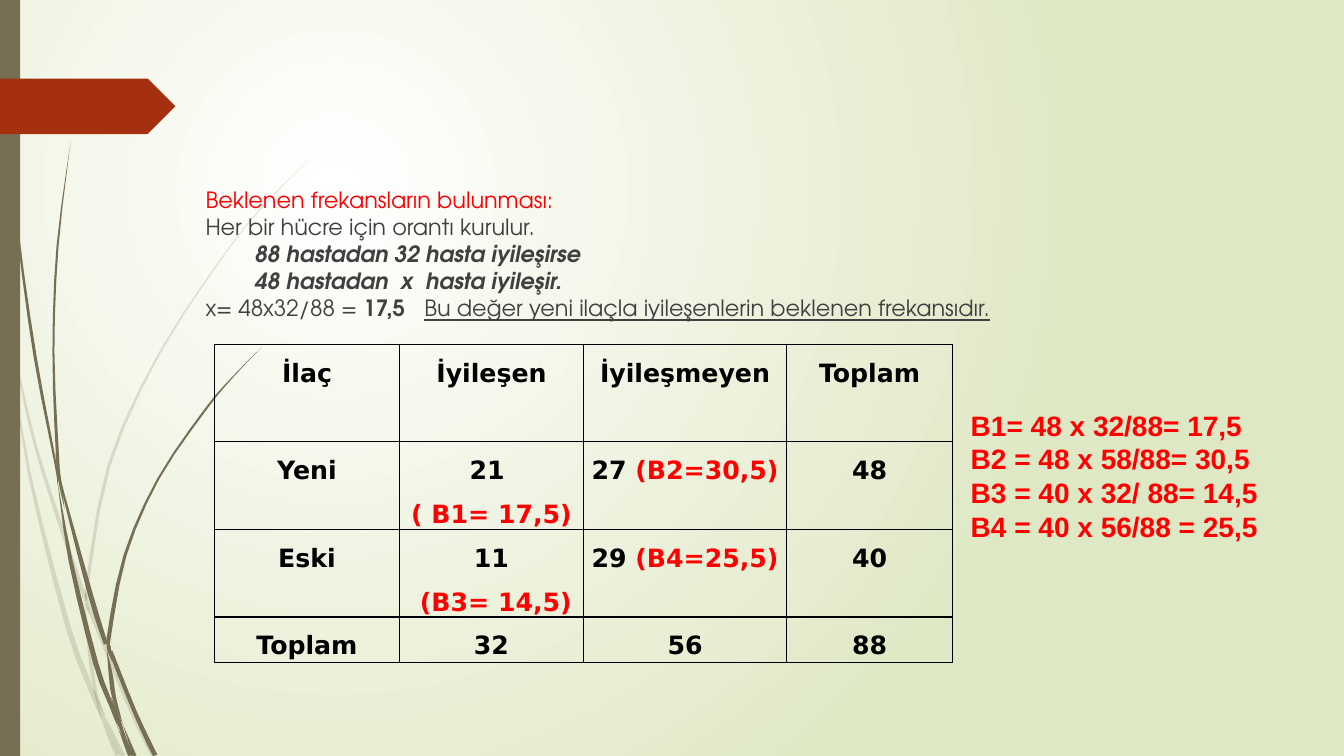
import math

from lxml import etree
from pptx import Presentation
from pptx.dml.color import RGBColor
from pptx.enum.shapes import MSO_SHAPE
from pptx.enum.text import PP_ALIGN
from pptx.oxml.ns import qn
from pptx.util import Inches, Pt

RECTANGLE, TAG = MSO_SHAPE.RECTANGLE, MSO_SHAPE.PENTAGON
CENTER = PP_ALIGN.CENTER

WHITE = RGBColor(0xFF, 0xFF, 0xFF)
PALE_GREEN = RGBColor(0xDF, 0xE8, 0xC4)
OLIVE = RGBColor(0x76, 0x6F, 0x54)
RUST = RGBColor(0xA5, 0x30, 0x10)
RED = RGBColor(0xFF, 0x00, 0x00)
BLACK = RGBColor(0x00, 0x00, 0x00)
GREY = RGBColor(0x40, 0x40, 0x40)

# Paragraphs: left indent, then runs of (text, colour, styles)
EXPLANATION = [
    (0, [("Beklenen frekansların bulunması:", RED, "")]),
    (0, [("Her bir hücre için orantı kurulur.", GREY, "")]),
    (0.49, [("88 hastadan 32 hasta iyileşirse", GREY, "bi")]),
    (0.49, [("48 hastadan  x  hasta iyileşir.", GREY, "bi")]),
    (0, [("x= 48x32/88 = ", GREY, ""), ("17,5\t", GREY, "b"),
         ("Bu değer yeni ilaçla iyileşenlerin beklenen frekansıdır.", GREY, "u")]),
]
FINDING_TAB = 2.17

EXPECTED = [
    "B1= 48 x 32/88= 17,5",
    "B2 = 48 x 58/88= 30,5",
    "B3 = 40 x 32/ 88= 14,5",
    "B4 = 40 x 56/88 = 25,5",
]

# Cells: observed count, expected count, whether the latter has its own line
COUNTS = [
    ["İlaç", "İyileşen", "İyileşmeyen", "Toplam"],
    ["Yeni", ("21 ", "( B1= 17,5)", True), ("27 ", "(B2=30,5)", False), "48"],
    ["Eski", ("11", " (B3= 14,5)", True), ("29 ", "(B4=25,5)", False), "40"],
    ["Toplam", "32", "56", "88"],
]
COLUMN_WIDTHS = [1.83, 1.83, 2.01, 1.65]
ROW_HEIGHTS = [0.96, 0.87, 0.87, 0.45]

# Pieces of the grass blades: (x, y, thickness) along the middle of each
PALE_BLADES = [
    [(0, 2.9, 0.04), (0.06, 3.2, 0.02), (0.11, 3.5, 0)],
    [(0.14, 3.45, 0), (0.21, 3.82, 0.02), (0.36, 4.45, 0.03), (0.6, 5.21, 0.04),
     (0.84, 5.93, 0.04)],
    [(0.88, 6.02, 0.04), (0.9, 6.07, 0.04), (1.25, 6.93, 0.04), (1.52, 7.5, 0.05)],
    [(1.05, 7.11, 0), (1.13, 7.31, 0.03), (1.22, 7.5, 0.05)],
    [(0.11, 3.5, 0), (0.29, 4.69, 0.03), (0.67, 6.2, 0.05), (0.92, 6.88, 0.05),
     (1.01, 7.14, 0)],
    [(0.84, 5.99, 0), (0.89, 6.46, 0.04), (0.95, 6.87, 0.03), (1.05, 7.11, 0)],
    [(3.12, 1.53, 0), (2.68, 1.97, 0.01), (2.28, 2.45, 0.01), (1.59, 3.49, 0.02),
     (1.08, 4.62, 0.03), (0.86, 5.84, 0.03), (0.87, 5.94, 0)],
    [(1.01, 7.14, 0), (1.08, 7.32, 0.02), (1.17, 7.5, 0.05)],
    [(0.85, 5.86, 0), (0.86, 5.97, 0.04), (0.88, 6.1, 0)],
    [(0.93, 6.83, 0), (0.99, 7.03, 0.04), (1.08, 7.26, 0.03), (1.19, 7.5, 0)],
]
DARK_BLADES = [
    [(0.03, 0, 0.01), (0.05, 0.48, 0.01), (0.07, 1.1, 0.01), (0.18, 2.33, 0.02),
     (0.35, 3.55, 0.03), (0.55, 4.6, 0.02), (0.57, 4.81, 0)],
    [(0.6, 4.72, 0), (0.63, 4.9, 0.02), (0.9, 5.91, 0.05), (1.05, 6.39, 0.04)],
    [(1.1, 6.45, 0.02), (1.12, 6.52, 0.04), (1.34, 7.07, 0.04), (1.54, 7.5, 0.05)],
    [(0.57, 4.77, 0), (0.7, 5.56, 0.04), (0.95, 6.58, 0.05), (1.1, 6.99, 0.04),
     (1.17, 7.22, 0)],
    [(0.7, 1.41, 0), (0.57, 2.45, 0.02), (0.53, 3.49, 0.02), (0.57, 4.51, 0.03),
     (0.6, 4.72, 0)],
    [(1.22, 7.19, 0), (1.28, 7.35, 0.02), (1.34, 7.5, 0.03)],
    [(0.55, 4.49, 0), (0.59, 4.75, 0.03), (0.64, 5.05, 0)],
    [(2.6, 3.44, 0), (2.31, 3.74, 0.01), (2.04, 4.06, 0.02), (1.57, 4.75, 0.02),
     (1.24, 5.51, 0.03), (1.08, 6.32, 0.04), (1.1, 6.41, 0)],
    [(1.17, 7.22, 0), (1.23, 7.36, 0.02), (1.29, 7.5, 0.04)],
    [(1.06, 6.45, 0), (1.1, 6.7, 0.04), (1.13, 6.91, 0.04), (1.22, 7.19, 0)],
    [(1.06, 6.31, 0), (1.08, 6.43, 0.04), (1.11, 6.56, 0)],
    [(1.1, 6.91, 0), (1.16, 7.1, 0.04), (1.24, 7.33, 0.03), (1.32, 7.5, 0.03)],
]


def paint(shape, color):
    shape.shadow.inherit = False
    shape.fill.solid()
    shape.fill.fore_color.rgb = color
    shape.line.fill.background()


def smooth(knots, steps=3):
    """Return points of a Catmull-Rom curve through the knots."""
    padded = [knots[0], *knots, knots[-1]]
    points = []
    for a, b, c, d in zip(padded, padded[1:], padded[2:], padded[3:]):
        for step in range(steps):
            t = step / steps
            points.append([
                q + t * (r - p) / 2 + t**2 * (2 * p - 5 * q + 4 * r - s) / 2
                + t**3 * (3 * q - p - 3 * r + s) / 2
                for p, q, r, s in zip(a, b, c, d)])
    return points + [list(knots[-1])]


def draw_blade(slide, knots, opacity):
    middle = smooth(knots)
    left, right = [], []
    for i, (x, y, thickness) in enumerate(middle):
        before, after = middle[max(i - 1, 0)], middle[min(i + 1, len(middle) - 1)]
        dx, dy = after[0] - before[0], after[1] - before[1]
        scale = max(thickness, 0) / 2 / math.hypot(dx, dy)
        left.append((x - dy * scale, y + dx * scale))
        right.append((x + dy * scale, y - dx * scale))
    outline = [(Inches(max(x, 0)), Inches(min(max(y, 0), 7.5)))
               for x, y in left + right[::-1]]
    builder = slide.shapes.build_freeform(*outline[0])
    builder.add_line_segments(outline[1:], close=True)
    blade = builder.convert_to_shape()
    paint(blade, OLIVE)
    if opacity < 100:
        color = next(blade._element.spPr.iter(qn("a:srgbClr")))
        etree.SubElement(color, qn("a:alpha"), val=str(opacity * 1000))


def add_run(paragraph, text, font_name, size, color, styles=""):
    run = paragraph.add_run()
    run.text = text
    font = run.font
    font.name, font.size, font.color.rgb = font_name, Pt(size), color
    font.bold, font.italic, font.underline = (s in styles for s in "biu")


def add_paragraph(frame, first):
    return frame.paragraphs[0] if first else frame.add_paragraph()


def add_text_frame(slide, left, top, width, height):
    box = slide.shapes.add_textbox(*map(Inches, (left, top, width, height)))
    box.text_frame.word_wrap = True
    return box.text_frame


def fill_background(slide):
    fill = slide.background.fill
    fill.gradient()
    for stop, color in zip(fill.gradient_stops, (WHITE, PALE_GREEN)):
        stop.color.rgb = color
    gradient = next(slide._element.iter(qn("a:gradFill")))
    gradient.remove(gradient.find(qn("a:lin")))
    circle = etree.SubElement(gradient, qn("a:path"), {"path": "circle"})
    etree.SubElement(circle, qn("a:fillToRect"),
                     l="50000", t="50000", r="100000", b="100000")


def fill_cell(cell, content):
    cell.margin_left = cell.margin_right = Inches(0.07)
    cell.margin_top = cell.margin_bottom = 0
    observed, expected, own_line = (
        content if isinstance(content, tuple) else (content, "", False))
    paragraph = cell.text_frame.paragraphs[0]
    add_run(paragraph, observed, "DejaVu Sans", 18, BLACK, "b")
    if own_line:
        paragraph = cell.text_frame.add_paragraph()
    if expected:
        add_run(paragraph, expected, "DejaVu Sans", 18, RED, "b")
    for line in cell.text_frame.paragraphs:
        line.alignment, line.line_spacing = CENTER, 1.5
    properties = cell._tc.get_or_add_tcPr()
    for side in ("lnL", "lnR", "lnT", "lnB"):
        border = etree.SubElement(properties, qn("a:" + side), w=str(Pt(1)))
        solid = etree.SubElement(border, qn("a:solidFill"))
        etree.SubElement(solid, qn("a:srgbClr"), val=str(BLACK))
    cell.fill.background()


def add_counts_table(slide):
    table = slide.shapes.add_table(
        len(COUNTS), len(COUNTS[0]), Inches(2.13), Inches(3.42),
        Inches(sum(COLUMN_WIDTHS)), Inches(sum(ROW_HEIGHTS))).table
    table.first_row = table.horz_banding = False
    for column, width in zip(table.columns, COLUMN_WIDTHS):
        column.width = Inches(width)
    for row, height, contents in zip(table.rows, ROW_HEIGHTS, COUNTS):
        row.height = Inches(height)
        for cell, content in zip(row.cells, contents):
            fill_cell(cell, content)


def main():
    presentation = Presentation()
    presentation.slide_width, presentation.slide_height = Inches(13.33), Inches(7.5)
    slide = presentation.slides.add_slide(presentation.slide_layouts[6])
    fill_background(slide)
    for blades, opacity in ((PALE_BLADES, 20), (DARK_BLADES, 100)):
        for knots in blades:
            draw_blade(slide, knots, opacity)
    for kind, color, area in ((RECTANGLE, OLIVE, (0, 0, 0.2, 7.5)),
                              (TAG, RUST, (0, 0.78, 1.74, 0.55))):
        paint(slide.shapes.add_shape(kind, *map(Inches, area)), color)

    add_counts_table(slide)

    expected = add_text_frame(slide, 9.53, 4, 3.46, 1.45)
    for i, formula in enumerate(EXPECTED):
        add_run(add_paragraph(expected, i == 0), formula, "Arial", 20, RED, "b")

    explanation = add_text_frame(slide, 1.94, 1.8, 11.3, 2.21)
    for i, (indent, runs) in enumerate(EXPLANATION):
        paragraph = add_paragraph(explanation, i == 0)
        properties = paragraph._p.get_or_add_pPr()
        properties.set("marL", str(Inches(indent)))
        tabs = etree.SubElement(properties, qn("a:tabLst"))
        etree.SubElement(tabs, qn("a:tab"), pos=str(Inches(FINDING_TAB)), algn="l")
        for text, color, styles in runs:
            add_run(paragraph, text, "TeX Gyre Adventor", 16, color, styles)

    presentation.save("out.pptx")


if __name__ == "__main__":
    main()
